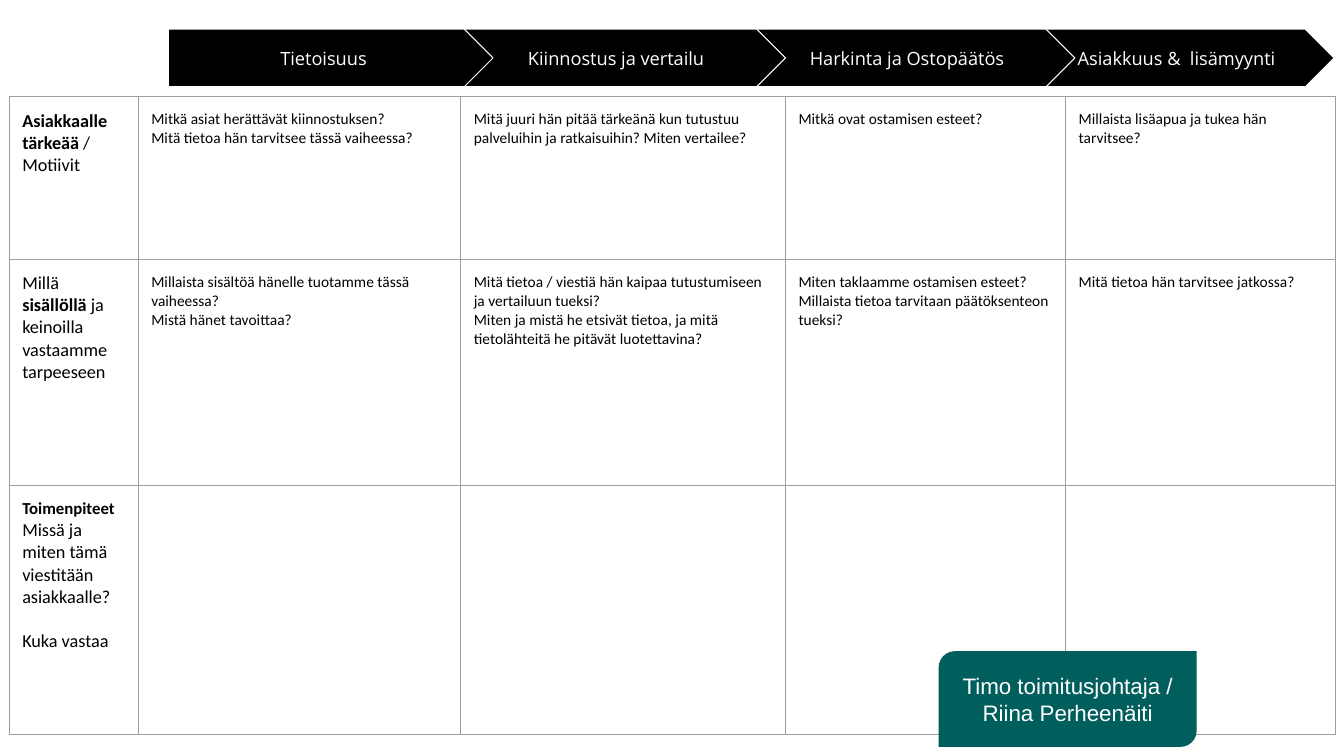
"""Build a customer journey slide: stage arrows, a question table and a persona badge."""
from dataclasses import dataclass

from lxml import etree
from pptx import Presentation
from pptx import util as u
from pptx.dml import color
from pptx.enum import shapes, text
from pptx.oxml import ns

WIDTH, HEIGHT = u.Inches(13.33), u.Inches(7.5)
BLACK, WHITE, GREY, TEAL = "000000", "FFFFFF", "9E9E9E", "005E5D"
LEFT, CENTER = text.PP_ALIGN.LEFT, text.PP_ALIGN.CENTER
PAD = 0.98


@dataclass
class Run:
    words: str
    size: float = 11
    bold: bool = False
    font: str = "Calibri"
    ink: str = BLACK


@dataclass
class Para:
    runs: list[Run]
    align: text.PP_ALIGN = LEFT
    before: float = 0
    indent: float = 0


@dataclass
class Block:
    kind: shapes.MSO_SHAPE
    left: float
    top: float
    width: float
    height: float
    turns: list[float]
    fill: str
    para: Para
    line: str = ""


def wide(share: float) -> int:
    """Turn a percentage of the slide width into a length."""
    return round(WIDTH * share / 100)


def high(share: float) -> int:
    """Turn a percentage of the slide height into a length."""
    return round(HEIGHT * share / 100)


def paint(code: str) -> color.RGBColor:
    """Turn a hex string into a colour."""
    return color.RGBColor.from_string(code)


def write(frame, paras: list[Para]) -> None:
    """Fill a text frame paragraph by paragraph and run by run."""
    for spot, para in enumerate(paras):
        line = frame.add_paragraph() if spot else frame.paragraphs[0]
        line.alignment = para.align
        line.space_before = u.Pt(para.before)
        if para.indent:
            line._p.get_or_add_pPr().set("marL", str(wide(para.indent)))
        for part in para.runs:
            run = line.add_run()
            run.text = part.words
            run.font.size = u.Pt(part.size)
            run.font.bold = part.bold
            run.font.name = part.font
            run.font.color.rgb = paint(part.ink)


def pad(box) -> None:
    """Set equal margins on a cell or a text frame."""
    box.margin_left = box.margin_right = wide(PAD)
    box.margin_top = box.margin_bottom = wide(PAD)


def draw(slide, block: Block) -> None:
    """Draw a filled shape with its text."""
    shape = slide.shapes.add_shape(block.kind, wide(block.left), high(block.top),
                                   wide(block.width), high(block.height))
    shape.shadow.inherit = False
    for spot, turn in enumerate(block.turns):
        shape.adjustments[spot] = turn
    shape.fill.solid()
    shape.fill.fore_color.rgb = paint(block.fill)
    if block.line:
        shape.line.color.rgb = paint(block.line)
        shape.line.width = u.Pt(0.75)
    else:
        shape.line.fill.background()
    frame = shape.text_frame
    frame.word_wrap = True
    frame.vertical_anchor = text.MSO_ANCHOR.MIDDLE
    pad(frame)
    write(frame, [block.para])


def edge(cell) -> None:
    """Give a cell thin grey borders on all four sides."""
    props = cell._tc.get_or_add_tcPr()
    for spot, side in enumerate(("lnL", "lnR", "lnT", "lnB")):
        line = etree.Element(ns.qn(f"a:{side}"), w=str(u.Pt(0.75)))
        fill = etree.SubElement(line, ns.qn("a:solidFill"))
        etree.SubElement(fill, ns.qn("a:srgbClr"), val=GREY)
        props.insert(spot, line)


def chart(slide, rows: list[list[list[Para]]]) -> None:
    """Draw the bordered table of questions."""
    spans, steps = [9.6, 24, 24.16, 20.85, 20.1], [21.47, 30, 32.93]
    table = slide.shapes.add_table(len(steps), len(spans), wide(0.68), high(12.8),
                                   wide(sum(spans)), high(sum(steps))).table
    table.first_row = table.horz_banding = False
    for col, span in zip(table.columns, spans):
        col.width = wide(span)
    for row, step, cells in zip(table.rows, steps, rows):
        row.height = high(step)
        for spot, (cell, paras) in enumerate(zip(row.cells, cells)):
            pad(cell)
            if spot == len(spans) - 1:
                cell.fill.solid()
                cell.fill.fore_color.rgb = paint(WHITE)
            else:
                cell.fill.background()
            edge(cell)
            write(cell.text_frame, paras)


def plain(*lines: str) -> list[Para]:
    """Make one small paragraph of each line."""
    return [Para([Run(line)]) for line in lines]


ROWS = [
    [
        [Para([Run("Asiakkaalle tärkeää", 13, True), Run(" /", 13)]),
         Para([Run("Motiivit", 13)])],
        plain("Mitkä asiat herättävät kiinnostuksen?",
              "Mitä tietoa hän tarvitsee tässä vaiheessa?"),
        plain("Mitä juuri hän pitää tärkeänä kun tutustuu palveluihin ja "
              "ratkaisuihin? Miten vertailee?"),
        plain("Mitkä ovat ostamisen esteet?"),
        plain("Millaista lisäapua ja tukea hän tarvitsee?"),
    ],
    [
        [Para([Run("Millä ", 13), Run("sisällöllä", 13, True),
               Run(" ja keinoilla vastaamme tarpeeseen", 13)])],
        plain("Millaista sisältöä hänelle tuotamme tässä vaiheessa?",
              "Mistä hänet tavoittaa?"),
        plain("Mitä tietoa / viestiä hän kaipaa tutustumiseen ja vertailuun tueksi?",
              "Miten ja mistä he etsivät tietoa, ja mitä tietolähteitä he pitävät "
              "luotettavina?"),
        plain("Miten taklaamme ostamisen esteet?",
              "Millaista tietoa tarvitaan päätöksenteon tueksi?"),
        plain("Mitä tietoa hän tarvitsee jatkossa?"),
    ],
    [
        [Para([Run("Toimenpiteet", 12, True)]),
         Para([Run("Missä ja miten tämä viestitään asiakkaalle?", 13)]),
         Para([Run("Kuka vastaa", 13)], before=15.9)],
        [], [], [], [],
    ],
]
STAGES = [
    ("Tietoisuus", 24.16, CENTER, 0),
    ("Kiinnostus ja vertailu", 24.16, CENTER, 0),
    ("Harkinta ja Ostopäätös", 23.93, CENTER, 0),
    ("Asiakkuus &  lisämyynti", 21.46, LEFT, 1.4),
]


def main() -> None:
    """Build and save the slide."""
    deck = Presentation()
    deck.slide_width, deck.slide_height = WIDTH, HEIGHT
    slide = deck.slides.add_slide(deck.slide_layouts[6])
    chart(slide, ROWS)
    for spot, (name, span, align, indent) in reversed(list(enumerate(STAGES))):
        para = Para([Run(name, 13, font="Open Sans", ink=WHITE)], align, indent=indent)
        draw(slide, Block(shapes.MSO_SHAPE.PENTAGON, 12.53 + 21.76 * spot, 3.87,
                          span, 7.6, [0.5], BLACK, para, WHITE))
    label = Run("Timo toimitusjohtaja / Riina Perheenäiti", 16, font="Arial", ink=WHITE)
    draw(slide, Block(shapes.MSO_SHAPE.ROUND_2_DIAG_RECTANGLE, 69.84, 86.13, 19.2, 12.67,
                      [0.17, 0], TEAL, Para([label], CENTER)))
    deck.save("out.pptx")


if __name__ == "__main__":
    main()
